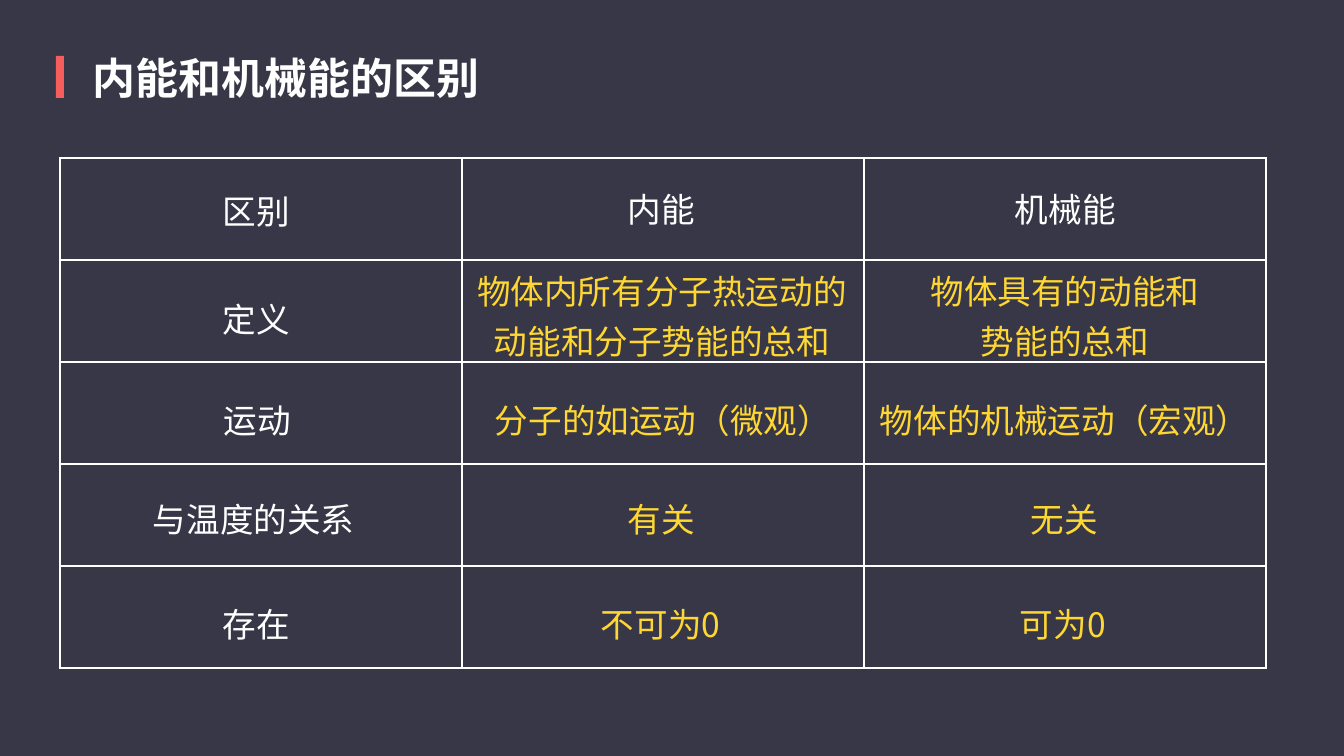
from lxml import etree
from pptx import Presentation
from pptx.dml.color import RGBColor
from pptx.enum.shapes import MSO_SHAPE
from pptx.enum.text import MSO_AUTO_SIZE, PP_ALIGN
from pptx.oxml.ns import qn
from pptx.util import Emu, Pt

RECT = MSO_SHAPE.RECTANGLE
GROW = MSO_AUTO_SIZE.SHAPE_TO_FIT_TEXT
LEFT, CENTER = PP_ALIGN.LEFT, PP_ALIGN.CENTER

FONT = "Noto Sans CJK SC"
NAVY, RED, WHITE, GOLD = "383747", "F65D5D", "FFFFFF", "FFD732"
WIDE, HIGH = 1344, 756

# Each entry: x and y inside its cell, text, and a width if it wraps
ROWS = [
    [(163, 23, "区别"), (166, 21, "内能"), (151, 21, "机械能")],
    [(163, 29, "定义"),
     (14, 1, "物体内所有分子热运动的动能和分子势能的总和", 372),
     (63, 1, "物体具有的动能和势能的总和", 276)],
    [(164, 28, "运动"), (33, 28, "分子的如运动（微观）"),
     (16, 28, "物体的机械运动（宏观）")],
    [(93, 25, "与温度的关系"), (166, 25, "有关"), (167, 25, "无关")],
    [(163, 28, "存在"), (139, 28, "不可为0"), (156, 28, "可为0")],
]


def px(n):
    return Emu(round(n * 914400 / 134.4))


def paint(fill, color):
    fill.solid()
    fill.fore_color.rgb = RGBColor.from_string(color)


def write(slide, x, y, text, size, color, width=None, bold=False):
    """Text that grows down from y; without a width it runs to the slide edge."""
    box = slide.shapes.add_textbox(px(x), px(y), px(width or WIDE - 1 - x), 0)
    frame = box.text_frame
    frame.word_wrap = True
    frame.auto_size = GROW
    frame.margin_left = frame.margin_right = 0
    frame.margin_top = frame.margin_bottom = 0
    frame.text = text
    para = frame.paragraphs[0]
    para.line_spacing = 1.25
    para.alignment = CENTER if width else LEFT
    run = para.runs[0]
    font = run.font
    font.name, font.size, font.bold = FONT, Pt(size), bold
    font.color.rgb = RGBColor.from_string(color)
    etree.SubElement(run._r.get_or_add_rPr(), qn("a:ea"), typeface=FONT)


def border(cell, color):
    props = cell._tc.get_or_add_tcPr()
    for i, side in enumerate(("lnL", "lnR", "lnT", "lnB")):
        line = etree.Element(qn("a:" + side), w=str(Pt(1)))
        fill = etree.SubElement(line, qn("a:solidFill"))
        etree.SubElement(fill, qn("a:srgbClr"), val=color)
        props.insert(i, line)


def heading(slide, x, y, text):
    # Red marker
    bar = slide.shapes.add_shape(RECT, px(x), px(y), px(8), px(42))
    bar.shadow.inherit = False
    paint(bar.fill, RED)
    bar.line.fill.background()
    # Title
    write(slide, x + 37, y - 17, text, 23, WHITE, bold=True)


def compare(slide, x, y, wide, high):
    rows, cols = len(ROWS), len(ROWS[0])
    step, drop = wide // cols, high // rows
    # Grid
    grid = slide.shapes.add_table(rows, cols, px(x), px(y), px(wide), px(high)).table
    grid.first_row = grid.horz_banding = False
    for col in grid.columns:
        col.width = px(step)
    for row in grid.rows:
        row.height = px(drop)
    for cell in grid.iter_cells():
        cell.fill.background()
        border(cell, WHITE)
    # Labels in white, answers in gold
    for r, row in enumerate(ROWS):
        for c, (dx, dy, text, *width) in enumerate(row):
            color = GOLD if r and c else WHITE
            write(slide, x + c * step + dx, y + r * drop + dy, text, 18, color, *width)


def main():
    deck = Presentation()
    deck.slide_width, deck.slide_height = px(WIDE), px(HIGH)
    slide = deck.slides.add_slide(deck.slide_layouts[6])
    paint(slide.background.fill, NAVY)
    heading(slide, 56, 56, "内能和机械能的区别")
    compare(slide, 60, 158, 1206, 510)
    deck.save("out.pptx")


if __name__ == "__main__":
    main()
